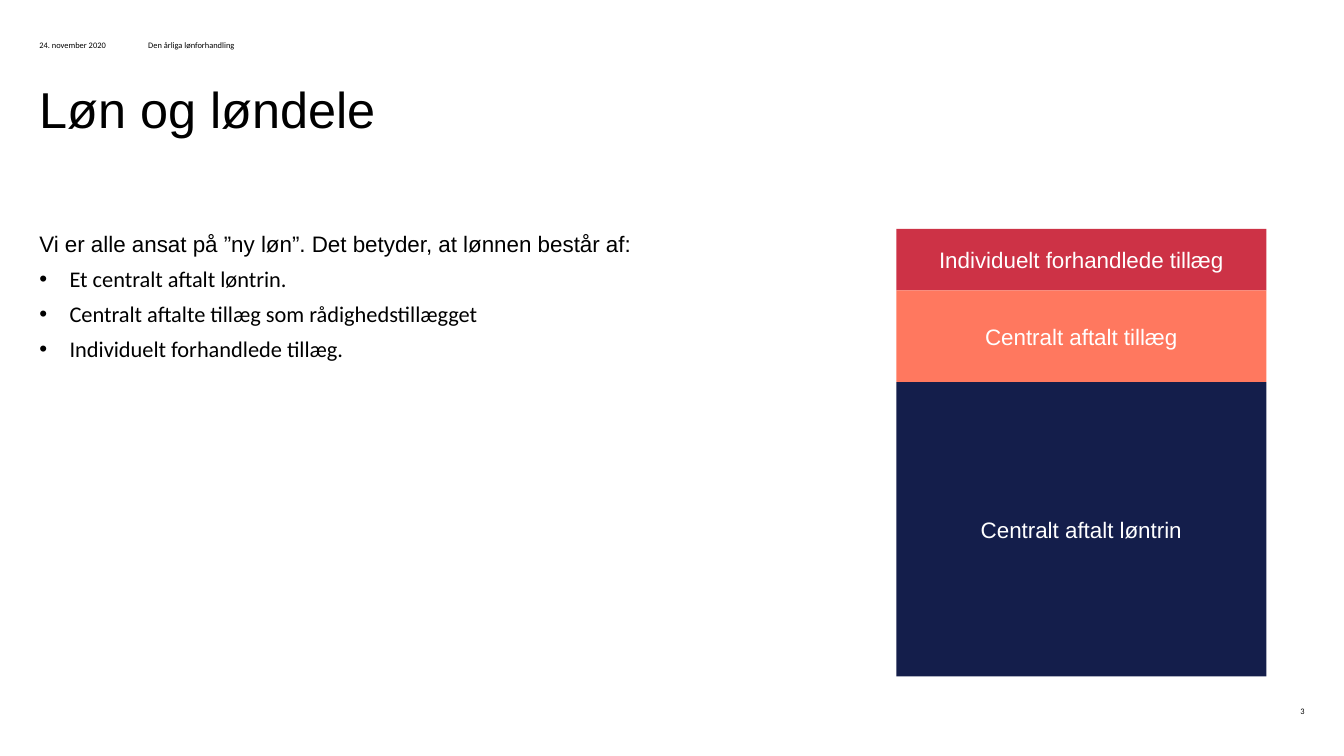
from lxml import etree
from pptx import Presentation
from pptx.dml.color import RGBColor
from pptx.enum.shapes import MSO_SHAPE
from pptx.enum.text import MSO_ANCHOR, PP_ALIGN
from pptx.oxml.ns import qn
from pptx.util import Inches, Pt

RECTANGLE = MSO_SHAPE.RECTANGLE
TOP, MIDDLE = MSO_ANCHOR.TOP, MSO_ANCHOR.MIDDLE
LEFT, CENTER, RIGHT = PP_ALIGN.LEFT, PP_ALIGN.CENTER, PP_ALIGN.RIGHT

BLACK = RGBColor(0x00, 0x00, 0x00)
WHITE = RGBColor(0xFF, 0xFF, 0xFF)
NAVY = RGBColor(0x14, 0x1E, 0x4B)
CORAL = RGBColor(0xFF, 0x78, 0x5F)
RED = RGBColor(0xCD, 0x32, 0x46)

MARGIN = 0.39
BULLET_INDENT = 0.3
BAR_LEFT, BAR_TOP, BAR_WIDTH = 8.89, 2.27, 3.67


class SalarySlide:
    heading_font = "Arial"
    detail_font = "Calibri"
    title_size, body_size, footer_size = 36, 16, 6

    def __init__(self, presentation):
        self.slide = presentation.slides.add_slide(presentation.slide_layouts[6])

    def frame(self, left, top, width, height, anchor=TOP):
        """Add a wrapping text box without insets and return its text frame."""
        box = self.slide.shapes.add_textbox(
            Inches(left), Inches(top), Inches(width), Inches(height))
        frame = box.text_frame
        frame.word_wrap = True
        frame.vertical_anchor = anchor
        frame.margin_left = frame.margin_right = 0
        frame.margin_top = frame.margin_bottom = 0
        return frame

    def add_text(self, paragraph, text, font, size, color=BLACK, align=LEFT):
        paragraph.alignment = align
        run = paragraph.add_run()
        run.text = text
        run.font.name = font
        run.font.size = Pt(size)
        run.font.color.rgb = color

    def title(self, text):
        heading = self.frame(MARGIN, 0.88, 12.55, 1.4).paragraphs[0]
        heading.line_spacing = 0.83
        self.add_text(heading, text, self.heading_font, self.title_size)

    def body(self, intro, points):
        frame = self.frame(MARGIN, 2.28, 7.15, 4.43)
        lead = frame.paragraphs[0]
        lead.space_after = Pt(6)
        self.add_text(lead, intro, self.heading_font, self.body_size)
        for point in points:
            item = frame.add_paragraph()
            self.bullet(item)
            item.space_after = Pt(6)
            self.add_text(item, point, self.detail_font, self.body_size)

    def bullet(self, paragraph):
        properties = paragraph._p.get_or_add_pPr()
        properties.set("marL", str(Inches(BULLET_INDENT)))
        properties.set("indent", str(-Inches(BULLET_INDENT)))
        etree.SubElement(properties, qn("a:buFont")).set("typeface", "Arial")
        etree.SubElement(properties, qn("a:buChar")).set("char", "•")

    def small_print(self, text, left, top, width, align=LEFT):
        line = self.frame(left, top, width, 0.12, MIDDLE).paragraphs[0]
        self.add_text(line, text, self.detail_font, self.footer_size, align=align)

    def salary_part(self, text, top, height, color):
        part = self.slide.shapes.add_shape(
            RECTANGLE, Inches(BAR_LEFT), Inches(top), Inches(BAR_WIDTH), Inches(height))
        part.shadow.inherit = False
        part.fill.solid()
        part.fill.fore_color.rgb = color
        part.line.fill.background()
        frame = part.text_frame
        frame.word_wrap = True
        frame.vertical_anchor = MIDDLE
        frame.margin_left = frame.margin_right = Inches(0.08)
        frame.margin_top = frame.margin_bottom = Inches(0.04)
        self.add_text(frame.paragraphs[0], text, self.heading_font, self.body_size,
                      WHITE, CENTER)


def main():
    presentation = Presentation()
    presentation.slide_width = Inches(13.33)
    presentation.slide_height = Inches(7.5)
    salary = SalarySlide(presentation)

    salary.title("Løn og løndele")
    salary.body(
        "Vi er alle ansat på ”ny løn”. Det betyder, at lønnen består af:",
        ["Et centralt aftalt løntrin.",
         "Centralt aftalte tillæg som rådighedstillægget",
         "Individuelt forhandlede tillæg."])
    salary.small_print("24. november 2020", MARGIN, 0.39, 1.08)
    salary.small_print("Den årliga lønforhandling", 1.47, 0.39, 1.76)
    salary.small_print("3", 12.56, 6.99, 0.38, RIGHT)

    part_top = BAR_TOP
    for text, height, color in [
        ("Individuelt forhandlede tillæg", 0.61, RED),
        ("Centralt aftalt tillæg", 0.91, CORAL),
        ("Centralt aftalt løntrin", 2.92, NAVY),
    ]:
        salary.salary_part(text, part_top, height, color)
        part_top += height

    presentation.save("out.pptx")


if __name__ == "__main__":
    main()
